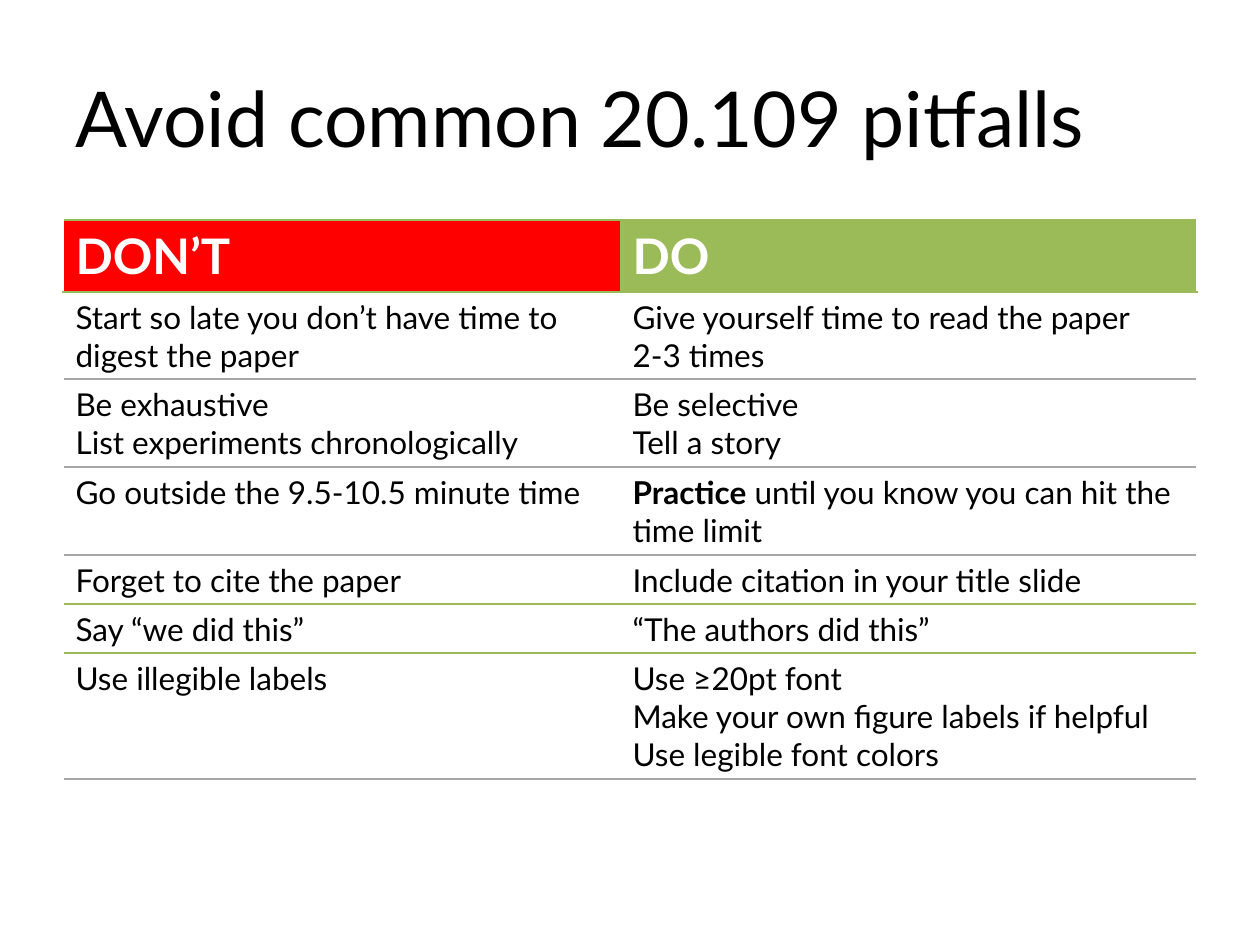
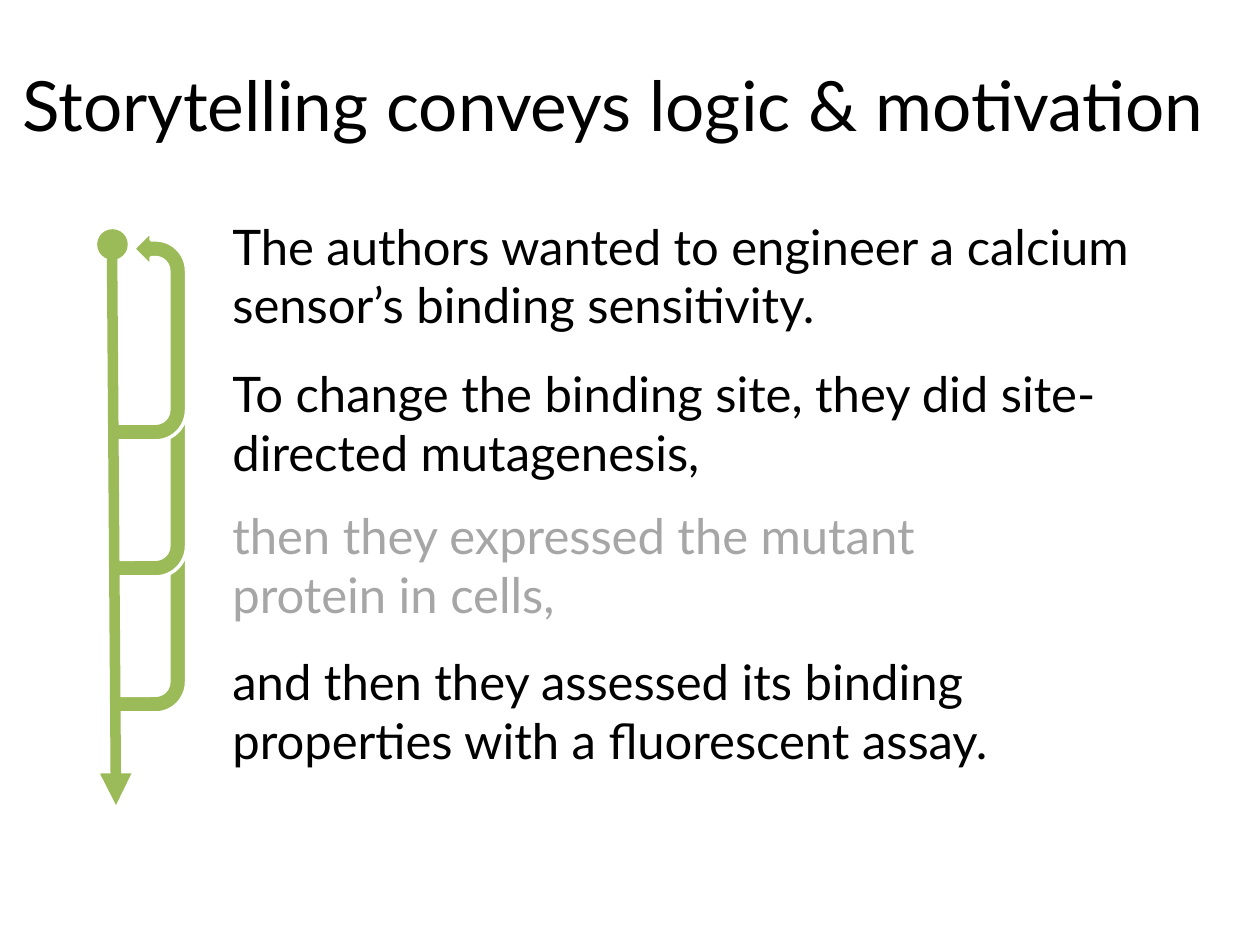
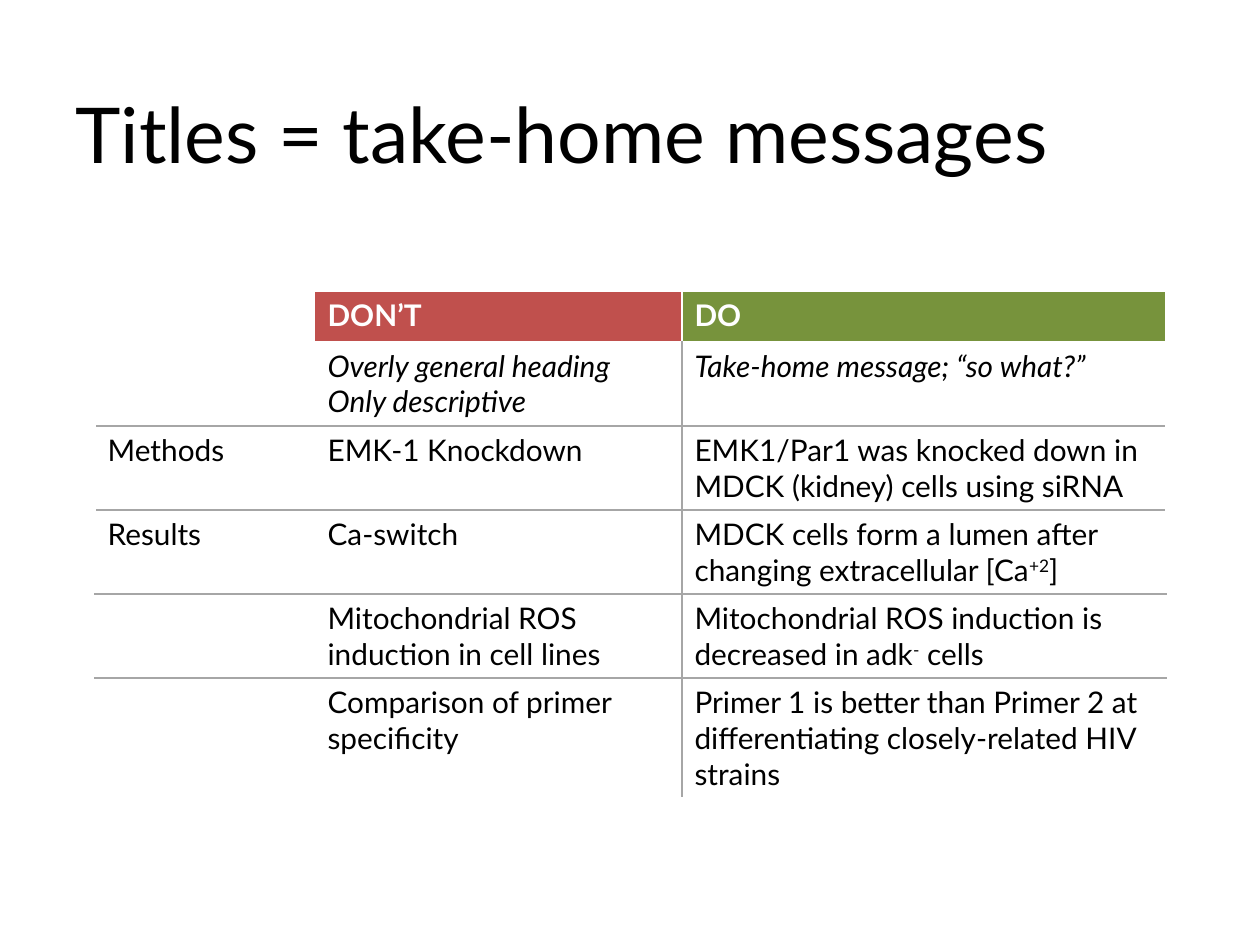
from lxml import etree
from pptx import Presentation
from pptx import util as u
from pptx.dml.color import RGBColor
from pptx.enum import shapes, text
from pptx.oxml.ns import qn

FONT = "Lato"
BLACK, WHITE, GREEN, GREY = "000000", "FFFFFF", "9BBB59", "A6A6A6"
RED, BRICK, OLIVE = "FF0000", "C0504D", "77933C"
HEADER = dict(color=WHITE, bold=True)

# Content: a row is (height, cells, line below); a cell is text or a list of (text, style) runs.
# Each block of rows is a table of its own, stacked on the one before.
PITFALLS_TITLE = "Avoid common 20.109 pitfalls"
PITFALLS = [
    [(72, ["DON’T", "DO"], GREEN),
     (87, ["Start so late you don’t have time to digest the paper",
           "Give yourself time to read the paper\n2-3 times"], GREY)],
    [(88, ["Be exhaustive\nList experiments chronologically",
           "Be selective\nTell a story"], GREY)],
    [(88, ["Go outside the 9.5-10.5 minute time",
           [("Practice", "bold"), (" until you know you can hit the time limit", "")]], GREY)],
    [(49, ["Forget to cite the paper", "Include citation in your title slide"], GREEN)],
    [(49, ["Say “we did this”", "“The authors did this”"], GREEN)],
    [(126, ["Use illegible labels",
            "Use ≥20pt font\nMake your own figure labels if helpful\n"
            "Use legible font colors"], GREY)],
]

STORY_TITLE = "Storytelling conveys logic & motivation"
STORY = [  # text, top, width, height, colour
    ("The authors wanted to engineer a calcium sensor’s binding sensitivity.",
     210, 955, 115, BLACK),
    ("To change the binding site, they did site-directed mutagenesis,", 357, 903, 105, BLACK),
    ("then they expressed the mutant protein in cells,", 499, 829, 131, GREY),
    ("and then they assessed its binding properties with a fluorescent assay.",
     645, 903, 131, BLACK),
]
LOOP_LENGTHS = [482, 346, 210]

MESSAGES_TITLE = "Titles = take-home messages"
MESSAGES = [
    [(50, ["", "DON’T", "DO"], WHITE),
     (85, ["", "Overly general heading\nOnly descriptive",
           "Take-home message; “so what?”"], GREY)],
    [(84, ["Methods", "EMK-1 Knockdown",
           "EMK1/Par1 was knocked down in MDCK (kidney) cells using siRNA"], GREY)],
    [(84, ["Results", "Ca-switch",
           [("MDCK cells form a lumen after changing extracellular [Ca", ""),
            ("+2", "super"), ("]", "")]], GREY),
     (84, ["", "Mitochondrial ROS induction in cell lines",
           [("Mitochondrial ROS induction is decreased in adk", ""),
            ("-", "super"), (" cells", "")]], GREY),
     (119, ["", "Comparison of primer specificity",
            "Primer 1 is better than Primer 2 at differentiating closely-related HIV strains"],
      WHITE)],
]


def px(n):
    return u.Emu(round(n * 914400 / 126))


def rgb(color):
    return RGBColor.from_string(color)


def write(frame, content, size=18, color=BLACK, bold=False, italic=False):
    paragraphs = ([[(line, "")] for line in content.split("\n")]
                  if isinstance(content, str) else [content])
    for i, runs in enumerate(paragraphs):
        paragraph = frame.add_paragraph() if i else frame.paragraphs[0]
        paragraph.font.size = u.Pt(size)
        for words, style in runs:
            run = paragraph.add_run()
            run.text = words
            run.font.name, run.font.size = FONT, u.Pt(size)
            run.font.color.rgb = rgb(color)
            run.font.bold, run.font.italic = bold or style == "bold", italic
            if style == "super":
                run.font._element.set("baseline", "30000")


def add_text(slide, content, left, top, width, height, anchor="TOP", **style):
    frame = slide.shapes.add_textbox(*map(px, (left, top, width, height))).text_frame
    frame.word_wrap = True
    frame.vertical_anchor = getattr(text.MSO_ANCHOR, anchor)
    write(frame, content, **style)


def add_slide(deck, title, left=63, top=38, width=1134, size=44):
    slide = deck.slides.add_slide(deck.slide_layouts[6])
    add_text(slide, title, left, top, width, 158, anchor="MIDDLE", size=size)
    return slide


def set_borders(cell, **colors):
    """Draw 1 pt cell borders; a side without a colour gets no line."""
    properties = cell._tc.get_or_add_tcPr()
    for i, side in enumerate("LRTB"):
        line = etree.Element(qn(f"a:ln{side}"), w=str(u.Pt(1)))
        if colors.get(side):
            solid = etree.SubElement(line, qn("a:solidFill"))
            etree.SubElement(solid, qn("a:srgbClr"), val=colors[side])
        else:
            etree.SubElement(line, qn("a:noFill"))
        properties.insert(i, line)


def add_stack(slide, blocks, left, top, widths, head_fills, body_fill, head_style,
              body_styles, first_line, head_divider=None, divider=None, size=18):
    """Stack tables; body_styles maps a row number to its own text format."""
    above, number = first_line, 0
    for block in blocks:
        height = sum(row[0] for row in block)
        table = slide.shapes.add_table(
            len(block), len(widths),
            *map(px, (left, top, sum(widths), height))).table
        table.first_row = table.horz_banding = False
        for column, width in zip(table.columns, widths):
            column.width = px(width)
        for r, (row_height, cells, below) in enumerate(block):
            table.rows[r].height = px(row_height)
            between = divider if number else head_divider
            style = body_styles.get(number, {}) if number else head_style
            for c, content in enumerate(cells):
                cell = table.cell(r, c)
                last = len(cells) - 1
                set_borders(cell, T=above, B=below,
                            L=WHITE if c == 0 else between if c == last else None,
                            R=WHITE if c == last else between if c == last - 1 else None)
                fill = body_fill if number else head_fills[c]
                if fill:
                    cell.fill.solid()
                    cell.fill.fore_color.rgb = rgb(fill)
                else:
                    cell.fill.background()
                write(cell.text_frame, content, **{"size": size, **style})
            above, number = below, number + 1
        top += height


def add_filled(slide, kind, left, top, width, height, line):
    shape = slide.shapes.add_shape(kind, *map(px, (left, top, width, height)))
    shape.shadow.inherit = False
    shape.fill.solid()
    shape.fill.fore_color.rgb = rgb(GREEN)
    shape.line.color.rgb = rgb(line)
    shape.line.width = u.Pt(2)
    return shape


def add_timeline(slide):
    # Loops back to the start: all share one top edge and one centre line
    loop_top, centre, depth = 231, 151, 71
    for length in LOOP_LENGTHS:
        loop = add_filled(slide, shapes.MSO_SHAPE.U_TURN_ARROW, centre - length / 2,
                          loop_top + (length - depth) / 2, length, depth, WHITE)
        loop.rotation = 270
        loop._element.spPr.find(qn("a:xfrm")).set("flipV", "1")
    # Arrow of time and its starting dot
    arrow = slide.shapes.add_connector(shapes.MSO_CONNECTOR.STRAIGHT,
                                       *map(px, (112, 242, 116, 805)))
    arrow.line.color.rgb = rgb(GREEN)
    arrow.line.width = u.Pt(6)
    etree.SubElement(arrow.line._get_or_add_ln(), qn("a:tailEnd"), type="triangle")
    etree.SubElement(arrow._element.spPr, qn("a:effectLst"))
    add_filled(slide, shapes.MSO_SHAPE.OVAL, 99, 231, 27, 27, GREEN)


def main():
    deck = Presentation()
    deck.slide_width, deck.slide_height = px(1260), px(945)

    # Pitfalls
    slide = add_slide(deck, PITFALLS_TITLE)
    add_stack(slide, PITFALLS, 63, 220, [557, 577], [RED, GREEN], WHITE,
              dict(HEADER, size=28), {}, GREEN)

    # Storytelling
    slide = add_slide(deck, STORY_TITLE, left=10, top=25, width=1250, size=39.6)
    add_timeline(slide)
    for sentence, top, width, height, color in STORY:
        add_text(slide, sentence, 220, top, width, height, size=28, color=color)

    # Take-home messages
    slide = add_slide(deck, MESSAGES_TITLE, top=54)
    add_stack(slide, MESSAGES, 95, 291, [220, 367, 484], [None, BRICK, OLIVE], None,
              HEADER, {1: dict(italic=True)}, WHITE,
              head_divider=WHITE, divider=GREY, size=17)

    deck.save("out.pptx")


if __name__ == "__main__":
    main()
